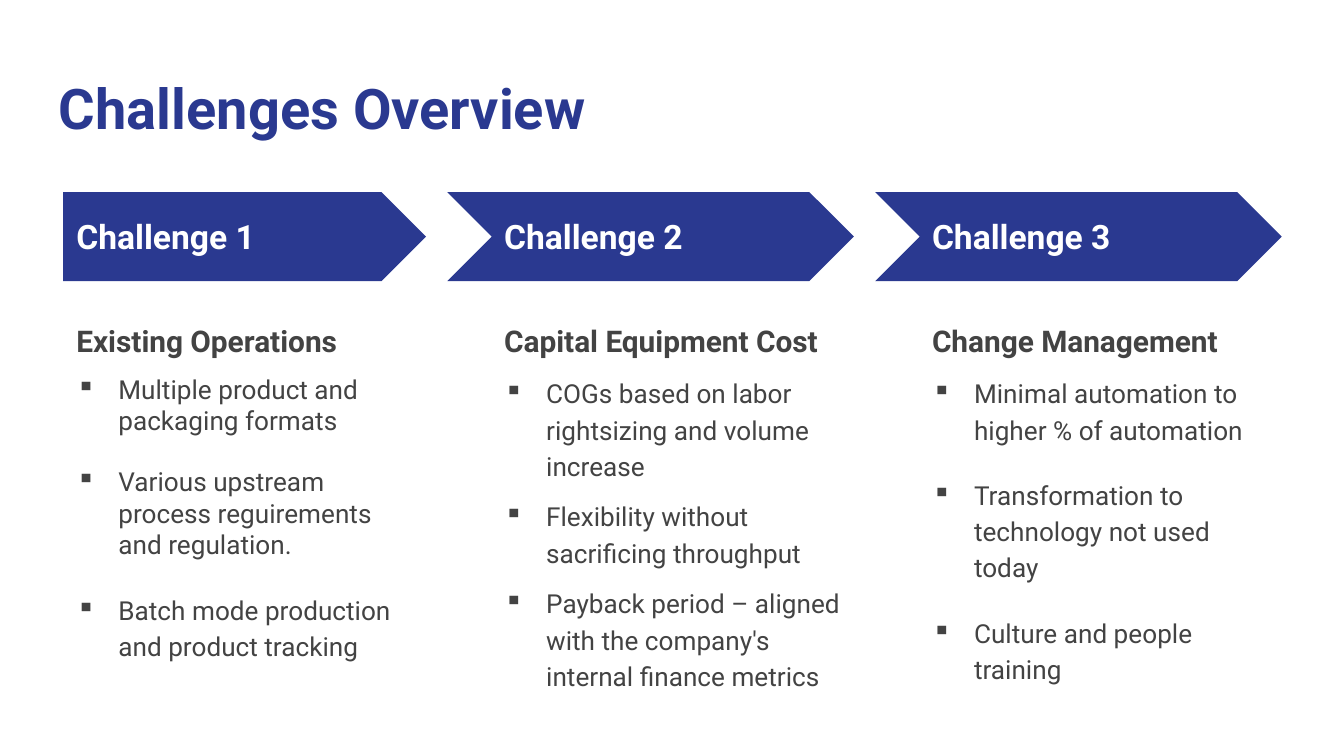
from lxml import etree
from pptx import Presentation
from pptx.dml.color import RGBColor
from pptx.enum.shapes import MSO_SHAPE
from pptx.enum.text import MSO_ANCHOR
from pptx.oxml.ns import qn
from pptx.util import Pt

PENTAGON, CHEVRON = MSO_SHAPE.PENTAGON, MSO_SHAPE.CHEVRON
TOP, MIDDLE = MSO_ANCHOR.TOP, MSO_ANCHOR.MIDDLE

NAVY = RGBColor(0x2A, 0x39, 0x90)
GRAY = RGBColor(0x43, 0x43, 0x43)
WHITE = RGBColor(0xFF, 0xFF, 0xFF)
FONT = "Roboto"

TITLE = "Challenges Overview"
# Bullets carry their own line spacing; "after" is the space below each one.
CHALLENGES = [
    {"label": "Challenge 1", "heading": "Existing Operations", "after": 8,
     "bullets": [("Multiple product and packaging formats", 1.0),
                 ("Various upstream process reguirements and regulation.", 1.0),
                 ("Batch mode production and product tracking", 1.15)]},
    {"label": "Challenge 2", "heading": "Capital Equipment Cost", "after": 0,
     "bullets": [("COGs based on labor rightsizing and volume increase", 1.15),
                 ("Flexibility without sacrificing throughput", 1.15),
                 ("Payback period – aligned with the company's internal finance metrics", 1.15)]},
    {"label": "Challenge 3", "heading": "Change Management", "after": 8,
     "bullets": [("Minimal automation to higher % of automation", 1.15),
                 ("Transformation to technology not used today", 1.15),
                 ("Culture and people training", 1.15)]},
]

SLIDE_W, SLIDE_H = 720, 405
LEFT, STEP, COLUMN_W = 33.84, 229.2, 194.4
ARROW_TOP, ARROW_H = 102.9, 47.7
NOTCH = 23.4  # how far a chevron starts left of its column
LABEL_TOP, LABEL_W, LABEL_H = 114.5, 177.8, 24.5
BODY_TOP, BODY_H = 162.7, 208.8
INSET, INDENT = 7.2, 22.5


def add_box(slide, left, top, width, height, anchor=TOP):
    box = slide.shapes.add_textbox(Pt(left), Pt(top), Pt(width), Pt(height))
    frame = box.text_frame
    frame.word_wrap = True
    frame.vertical_anchor = anchor
    frame.margin_left = frame.margin_right = Pt(INSET)
    frame.margin_top = frame.margin_bottom = Pt(INSET)
    return frame


def add_bullet(para, color):
    properties = para._p.get_or_add_pPr()
    properties.set("marL", str(Pt(INDENT)))
    properties.set("indent", str(-Pt(INDENT)))
    bullet_color = etree.SubElement(properties, qn("a:buClr"))
    etree.SubElement(bullet_color, qn("a:srgbClr"), val=str(color))
    etree.SubElement(properties, qn("a:buChar"), char="▪")


def write(frame, text, size, color, bold=False, line=1.0, before=0, after=0, bullet=False):
    """Fill the frame's empty first paragraph, or append a new one."""
    para = frame.paragraphs[0] if not frame.text else frame.add_paragraph()
    para.line_spacing = line
    para.space_before, para.space_after = Pt(before), Pt(after)
    if bullet:
        add_bullet(para, color)
    span = para.add_run()
    span.text = text
    span.font.name, span.font.size = FONT, Pt(size)
    span.font.bold = bold
    span.font.color.rgb = color


def add_arrow(slide, kind, left, right):
    arrow = slide.shapes.add_shape(kind, Pt(left), Pt(ARROW_TOP), Pt(right - left), Pt(ARROW_H))
    arrow.adjustments[0] = 0.5
    arrow.shadow.inherit = False
    arrow.fill.solid()
    arrow.fill.fore_color.rgb = NAVY
    arrow.line.fill.background()


def add_challenge(slide, index, challenge):
    left = LEFT + index * STEP
    kind, notch = (CHEVRON, NOTCH) if index else (PENTAGON, 0)
    add_arrow(slide, kind, left - notch, left + COLUMN_W)

    label = add_box(slide, left, LABEL_TOP, LABEL_W, LABEL_H, anchor=MIDDLE)
    write(label, challenge["label"], 18, WHITE, bold=True)

    body = add_box(slide, left, BODY_TOP, COLUMN_W, BODY_H)
    write(body, challenge["heading"], 16, GRAY, bold=True, line=1.15)
    for text, line in challenge["bullets"]:
        write(body, text, 14, GRAY, line=line, before=8, after=challenge["after"], bullet=True)


def main():
    deck = Presentation()
    deck.slide_width, deck.slide_height = Pt(SLIDE_W), Pt(SLIDE_H)
    slide = deck.slides.add_slide(deck.slide_layouts[6])
    title = add_box(slide, 24.5, 32.4, 671, 47.5)
    write(title, TITLE, 30, NAVY, bold=True)
    for index, challenge in enumerate(CHALLENGES):
        add_challenge(slide, index, challenge)
    deck.save("out.pptx")


if __name__ == "__main__":
    main()
